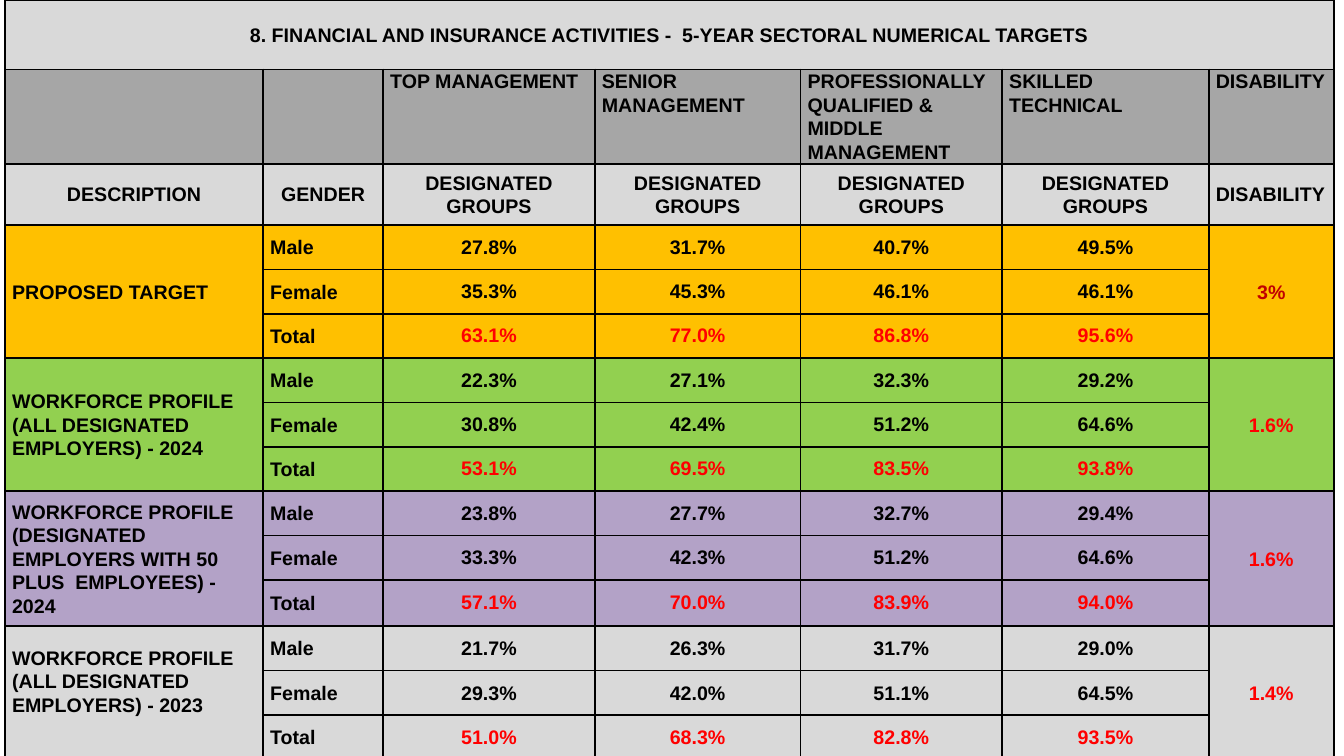
from lxml import etree
from pptx import Presentation
from pptx import util as u
from pptx.dml import color
from pptx.enum import text
from pptx.oxml import ns

COLORS = {
    "black": "000000", "red": "FF0000", "dark red": "C00000",
    "light grey": "D9D9D9", "grey": "A6A6A6", "amber": "FFC000",
    "green": "92D050", "purple": "B3A2C7",
}
COLUMN_WIDTHS = [2.56, 1.19, 2.1, 2.04, 2, 2.05, 1.24]
ROW_HEIGHTS = [0.69, 0.9, 0.61] + [0.44] * 8 + [0.46] + [0.44] * 3
LEFT, CENTER = text.PP_ALIGN.LEFT, text.PP_ALIGN.CENTER
TOP, MIDDLE = text.MSO_ANCHOR.TOP, text.MSO_ANCHOR.MIDDLE


def style_cell(cell, fill):
    """Black borders on every side and a solid fill."""
    properties = cell._tc.get_or_add_tcPr()
    for side in ("a:lnL", "a:lnR", "a:lnT", "a:lnB"):
        line = etree.SubElement(properties, ns.qn(side), w=str(u.Pt(1.5)))
        solid = etree.SubElement(line, ns.qn("a:solidFill"))
        etree.SubElement(solid, ns.qn("a:srgbClr"), val=COLORS["black"])
    cell.fill.solid()
    cell.fill.fore_color.rgb = color.RGBColor.from_string(COLORS[fill])


def write_cell(cell, words, align=CENTER, ink="black", anchor=MIDDLE, spacing=1.07):
    cell.vertical_anchor = anchor
    cell.margin_left = cell.margin_right = u.Inches(0.07)
    cell.margin_top = cell.margin_bottom = 0
    para = cell.text_frame.paragraphs[0]
    para.alignment = align
    para.line_spacing = spacing
    span = para.add_run()
    span.text = words
    span.font.name = "Arial"
    span.font.size = u.Pt(14)
    span.font.bold = True
    span.font.color.rgb = color.RGBColor.from_string(COLORS[ink])


deck = Presentation()
deck.slide_width, deck.slide_height = u.Inches(13.33), u.Inches(7.5)
page = deck.slides.add_slide(deck.slide_layouts[6])

# Table grid
frame = page.shapes.add_table(
    len(ROW_HEIGHTS), len(COLUMN_WIDTHS), u.Inches(0.05), 0,
    u.Inches(sum(COLUMN_WIDTHS)), u.Inches(sum(ROW_HEIGHTS)))
table = frame.table
table.first_row = table.horz_banding = False
for column, width in zip(table.columns, COLUMN_WIDTHS):
    column.width = u.Inches(width)
for row, height in zip(table.rows, ROW_HEIGHTS):
    row.height = u.Inches(height)

# Fills and borders: three heading rows, then four groups of three
row_fills = ["light grey", "grey", "light grey"]
for group_fill in ("amber", "green", "purple", "light grey"):
    row_fills += [group_fill] * 3
for row, fill in zip(table.rows, row_fills):
    for cell in row.cells:
        style_cell(cell, fill)

# Title and headings
table.cell(0, 0).merge(table.cell(0, 6))
write_cell(table.cell(0, 0),
           "8. FINANCIAL AND INSURANCE ACTIVITIES -  5-YEAR SECTORAL NUMERICAL TARGETS")
levels = ["TOP MANAGEMENT", "SENIOR MANAGEMENT",
          "PROFESSIONALLY QUALIFIED & MIDDLE MANAGEMENT", "SKILLED TECHNICAL", "DISABILITY"]
for c, level in enumerate(levels, 2):
    write_cell(table.cell(1, c), level, LEFT, anchor=TOP)
headings = ["DESCRIPTION", "GENDER"] + ["DESIGNATED GROUPS"] * 4 + ["DISABILITY"]
for c, heading in enumerate(headings):
    write_cell(table.cell(2, c), heading, LEFT if c == 6 else CENTER)

# Groups: description, disability share, its colour, line spacing, male / female / total
groups = [
    ("PROPOSED TARGET", "3%", "dark red", 1,
     ["27.8% 31.7% 40.7% 49.5%", "35.3% 45.3% 46.1% 46.1%", "63.1% 77.0% 86.8% 95.6%"]),
    ("WORKFORCE PROFILE (ALL DESIGNATED EMPLOYERS) - 2024", "1.6%", "red", 1,
     ["22.3% 27.1% 32.3% 29.2%", "30.8% 42.4% 51.2% 64.6%", "53.1% 69.5% 83.5% 93.8%"]),
    ("WORKFORCE PROFILE (DESIGNATED EMPLOYERS WITH 50 PLUS  EMPLOYEES) - 2024",
     "1.6%", "red", 1,
     ["23.8% 27.7% 32.7% 29.4%", "33.3% 42.3% 51.2% 64.6%", "57.1% 70.0% 83.9% 94.0%"]),
    ("WORKFORCE PROFILE (ALL DESIGNATED EMPLOYERS) - 2023", "1.4%", "red", 1.07,
     ["21.7% 26.3% 31.7% 29.0%", "29.3% 42.0% 51.1% 64.5%", "51.0% 68.3% 82.8% 93.5%"]),
]
for g, (description, disability, ink, spacing, lines) in enumerate(groups):
    first = 3 + 3 * g
    for c in (0, 6):
        table.cell(first, c).merge(table.cell(first + 2, c))
    write_cell(table.cell(first, 0), description, LEFT)
    write_cell(table.cell(first, 6), disability, ink=ink)
    for r, (gender, line) in enumerate(zip(("Male", "Female", "Total"), lines), first):
        write_cell(table.cell(r, 1), gender, LEFT)
        for c, share in enumerate(line.split(), 2):
            write_cell(table.cell(r, c), share, spacing=spacing,
                       ink="red" if gender == "Total" else "black")

# The last description sits a little above the middle
table.cell(12, 0).margin_bottom = u.Inches(0.23)

deck.save("out.pptx")
